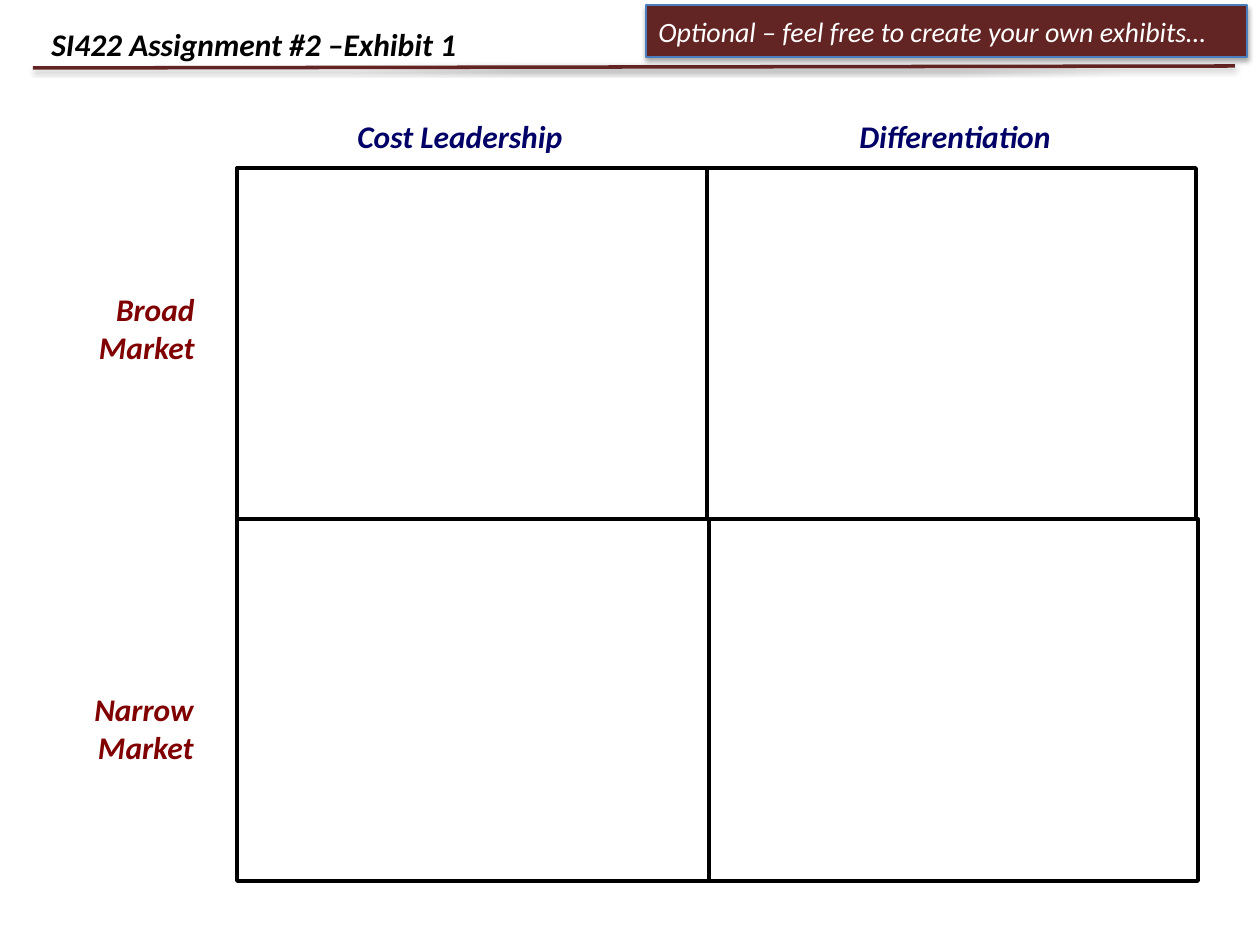
"""Build a two-by-two strategy exhibit with a title and a banner."""
from lxml import etree
from pptx import Presentation, util as u
from pptx.dml.color import RGBColor
from pptx.enum import shapes, text
from pptx.oxml.ns import qn

PX = u.Inches(1) / 126
THEME = {
    "font": "Calibri", "label": 18, "note": 16,
    "black": RGBColor.from_string("000000"),
    "white": RGBColor.from_string("FFFFFF"),
    "maroon": RGBColor.from_string("632523"),
    "red": RGBColor.from_string("800000"),
    "navy": RGBColor.from_string("000066"),
    "blue": RGBColor.from_string("4B7EBC"),
}
LEFT, CENTER, RIGHT = text.PP_ALIGN.LEFT, text.PP_ALIGN.CENTER, text.PP_ALIGN.RIGHT
TOP, MIDDLE = text.MSO_ANCHOR.TOP, text.MSO_ANCHOR.MIDDLE


def write(sp, words, color, size="label", bold=True, align=LEFT, anchor=TOP):
    tf = sp.text_frame
    tf.word_wrap = True
    tf.vertical_anchor = anchor
    p = tf.paragraphs[0]
    p.alignment = align
    r = p.add_run()
    r.text = words
    r.font.color.rgb = THEME[color]
    fmt = {"name": THEME["font"], "size": u.Pt(THEME[size]), "bold": bold, "italic": True}
    for name, value in fmt.items():
        setattr(r.font, name, value)


def cast_shadow(sp, distance, opacity):
    effects = etree.SubElement(sp._element.spPr, qn("a:effectLst"))
    shadow = etree.SubElement(effects, qn("a:outerShdw"), blurRad=str(u.Pt(3.1)),
                              dist=str(u.Pt(distance)), dir="5400000", rotWithShape="0")
    color = etree.SubElement(shadow, qn("a:srgbClr"), val=str(THEME["black"]))
    etree.SubElement(color, qn("a:alpha"), val=str(opacity * 1000))


prs = Presentation()
prs.slide_width, prs.slide_height = u.Inches(10), u.Inches(7.5)
s = prs.slides.add_slide(prs.slide_layouts[6])

quadrants = [(237, 168, 548, 351), (707, 168, 489, 374),
             (237, 519, 548, 362), (709, 519, 489, 362)]
for box in quadrants:
    sp = s.shapes.add_shape(shapes.MSO_SHAPE.RECTANGLE, *[int(v * PX) for v in box])
    sp.shadow.inherit = False
    sp.fill.solid()
    sp.fill.fore_color.rgb = THEME["white"]
    sp.line.color.rgb = THEME["black"]
    sp.line.width = u.Pt(2.25)

labels = [
    ("SI422 Assignment #2 –Exhibit 1", (39, 0, 1085, 87), "black", LEFT, MIDDLE),
    ("Broad Market", (33, 284, 174, 89), "red", RIGHT, TOP),
    ("Narrow Market", (39, 684, 167, 89), "red", RIGHT, TOP),
    ("Cost Leadership", (345, 111, 363, 50), "navy", LEFT, TOP),
    ("Differentiation", (785, 111, 340, 50), "navy", CENTER, TOP),
]
for words, box, color, align, anchor in labels:
    sp = s.shapes.add_textbox(*[int(v * PX) for v in box])
    write(sp, words, color, align=align, anchor=anchor)

rule = s.shapes.add_connector(shapes.MSO_CONNECTOR.STRAIGHT,
                              *[int(v * PX) for v in (33, 68, 1235, 66)])
rule.line.color.rgb = THEME["maroon"]
rule.line.width = u.Pt(2)
cast_shadow(rule, 1.6, 38)

banner = s.shapes.add_shape(shapes.MSO_SHAPE.RECTANGLE,
                            *[int(v * PX) for v in (646, 5, 601, 52)])
banner.fill.solid()
banner.fill.fore_color.rgb = THEME["maroon"]
banner.line.color.rgb = THEME["blue"]
banner.line.width = u.Pt(0.75)
cast_shadow(banner, 1.8, 35)
write(banner, "Optional – feel free to create your own exhibits…", "white",
      size="note", bold=False, anchor=MIDDLE)

prs.save("out.pptx")
